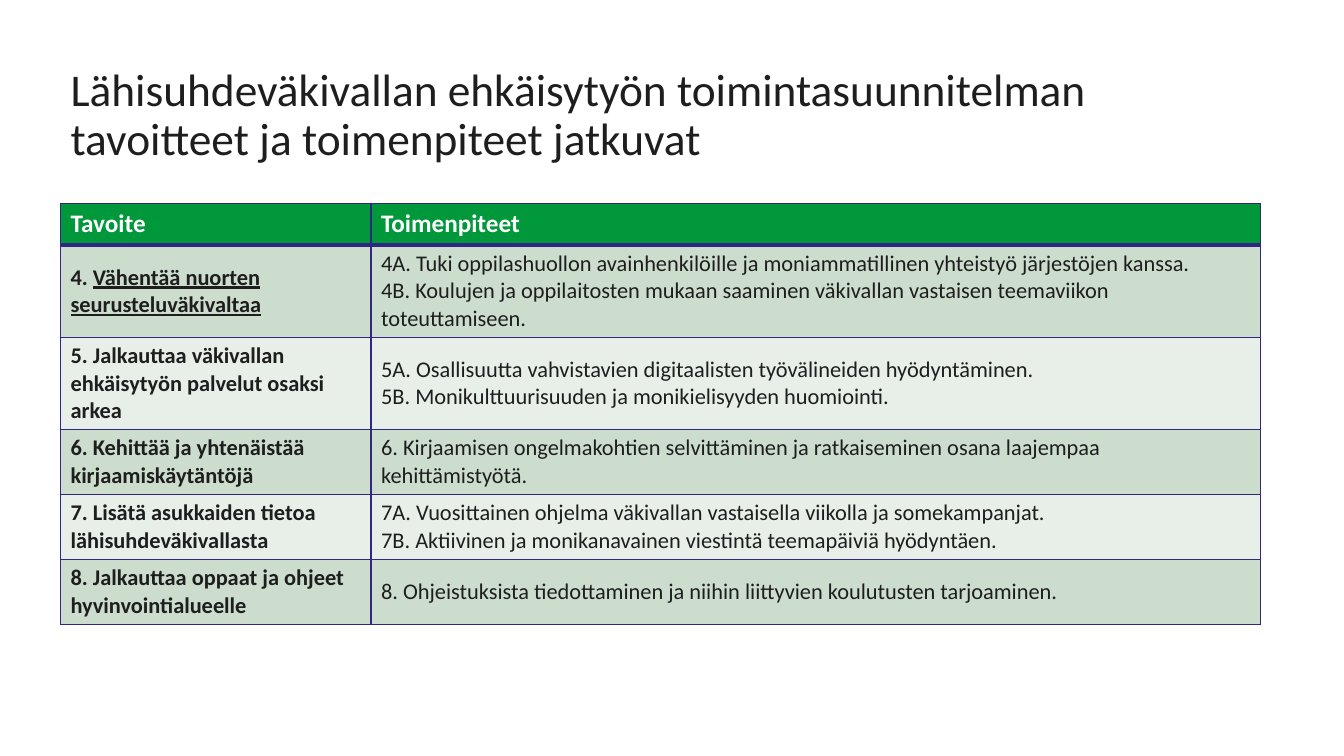
from dataclasses import dataclass

from lxml.etree import SubElement
from pptx import Presentation
from pptx.dml.color import RGBColor as RGB
from pptx.enum.text import MSO_ANCHOR as Anchor, MSO_AUTO_SIZE as Fit, PP_ALIGN as Align
from pptx.oxml.ns import qn
from pptx.util import Inches, Pt

TITLE = "Lähisuhdeväkivallan ehkäisytyön toimintasuunnitelman tavoitteet ja toimenpiteet jatkuvat"
HEAD = ("Tavoite", "Toimenpiteet")
GOALS = [
    (("4. ", "Vähentää nuorten seurusteluväkivaltaa"),
     "4A. Tuki oppilashuollon avainhenkilöille ja moniammatillinen yhteistyö järjestöjen kanssa.\n"
     "4B. Koulujen ja oppilaitosten mukaan saaminen väkivallan vastaisen teemaviikon toteuttamiseen."),
    (("5. Jalkauttaa väkivallan ehkäisytyön palvelut osaksi arkea",),
     "5A. Osallisuutta vahvistavien digitaalisten työvälineiden hyödyntäminen.\n"
     "5B. Monikulttuurisuuden ja monikielisyyden huomiointi."),
    (("6. Kehittää ja yhtenäistää kirjaamiskäytäntöjä",),
     "6. Kirjaamisen ongelmakohtien selvittäminen ja ratkaiseminen osana laajempaa kehittämistyötä."),
    (("7. Lisätä asukkaiden tietoa lähisuhdeväkivallasta",),
     "7A. Vuosittainen ohjelma väkivallan vastaisella viikolla ja somekampanjat.\n"
     "7B. Aktiivinen ja monikanavainen viestintä teemapäiviä hyödyntäen."),
    (("8. Jalkauttaa oppaat ja ohjeet hyvinvointialueelle",),
     "8. Ohjeistuksista tiedottaminen ja niihin liittyvien koulutusten tarjoaminen."),
]
COLS = (3.08, 8.82)
ROW = 0.41


@dataclass(frozen=True)
class Theme:
    font: str = "Calibri"
    ink: str = "1E1E1E"
    white: str = "FFFFFF"
    green: str = "00983A"
    bands: tuple = ("CCDDCE", "E7EFE8")
    rule: str = "302783"
    title: float = 32.4
    head: float = 18
    body: float = 16


T = Theme()


def style(para, size, color, bold=False):
    """Set the font of a whole paragraph."""
    font = para.font
    font.name, font.size, font.bold = T.font, Pt(size), bold
    font.color.rgb = RGB.from_string(color)


def border(cell, top, base):
    """Draw the four cell edges, with top and base widths in points."""
    props = cell._tc.get_or_add_tcPr()
    for side, width in (("L", 1), ("R", 1), ("T", top), ("B", base)):
        line = SubElement(props, qn(f"a:ln{side}"), w=str(Pt(width)))
        fill = SubElement(line, qn("a:solidFill"))
        SubElement(fill, qn("a:srgbClr"), val=T.rule)


def paint(cell, parts, size, color, bold, back, top, base):
    """Fill one cell; any part after the first is underlined."""
    border(cell, top, base)
    cell.fill.solid()
    cell.fill.fore_color.rgb = RGB.from_string(back)
    cell.vertical_anchor = Anchor.MIDDLE
    para = cell.text_frame.paragraphs[0]
    para.text = parts[0]
    for part in parts[1:]:
        run = para.add_run()
        run.text = part
        run.font.underline = True
    style(para, size, color, bold)


def add_title(slide):
    """Place the slide title."""
    box = slide.shapes.title
    box.left, box.top, box.width, box.height = map(Inches, (0.6, 0.24, 11.22, 1.45))
    frame = box.text_frame
    frame.text = TITLE
    frame.word_wrap, frame.auto_size = True, Fit.NONE
    frame.vertical_anchor = Anchor.BOTTOM
    para = frame.paragraphs[0]
    para.alignment, para.line_spacing = Align.LEFT, 0.9
    style(para, T.title, T.ink)


def add_goals(slide):
    """Build the table of goals and measures."""
    count = len(GOALS) + 1
    grid = slide.shapes.add_table(count, len(COLS), Inches(0.6), Inches(2.02),
                                  Inches(sum(COLS)), Inches(ROW * count)).table
    for col, width in zip(grid.columns, COLS):
        col.width = Inches(width)
    for c, label in enumerate(HEAD):
        paint(grid.cell(0, c), (label,), T.head, T.white, True, T.green, 1, 3)
    for r, (goal, steps) in enumerate(GOALS, 1):
        back = T.bands[(r - 1) % 2]
        top = 3 if r == 1 else 1
        paint(grid.cell(r, 0), goal, T.body, T.ink, True, back, top, 1)
        paint(grid.cell(r, 1), (steps,), T.body, T.ink, False, back, top, 1)


def main():
    """Build and save the slide."""
    deck = Presentation()
    deck.slide_width, deck.slide_height = Inches(13.33), Inches(7.5)
    slide = deck.slides.add_slide(deck.slide_layouts[5])
    add_title(slide)
    add_goals(slide)
    deck.save("out.pptx")


if __name__ == "__main__":
    main()
